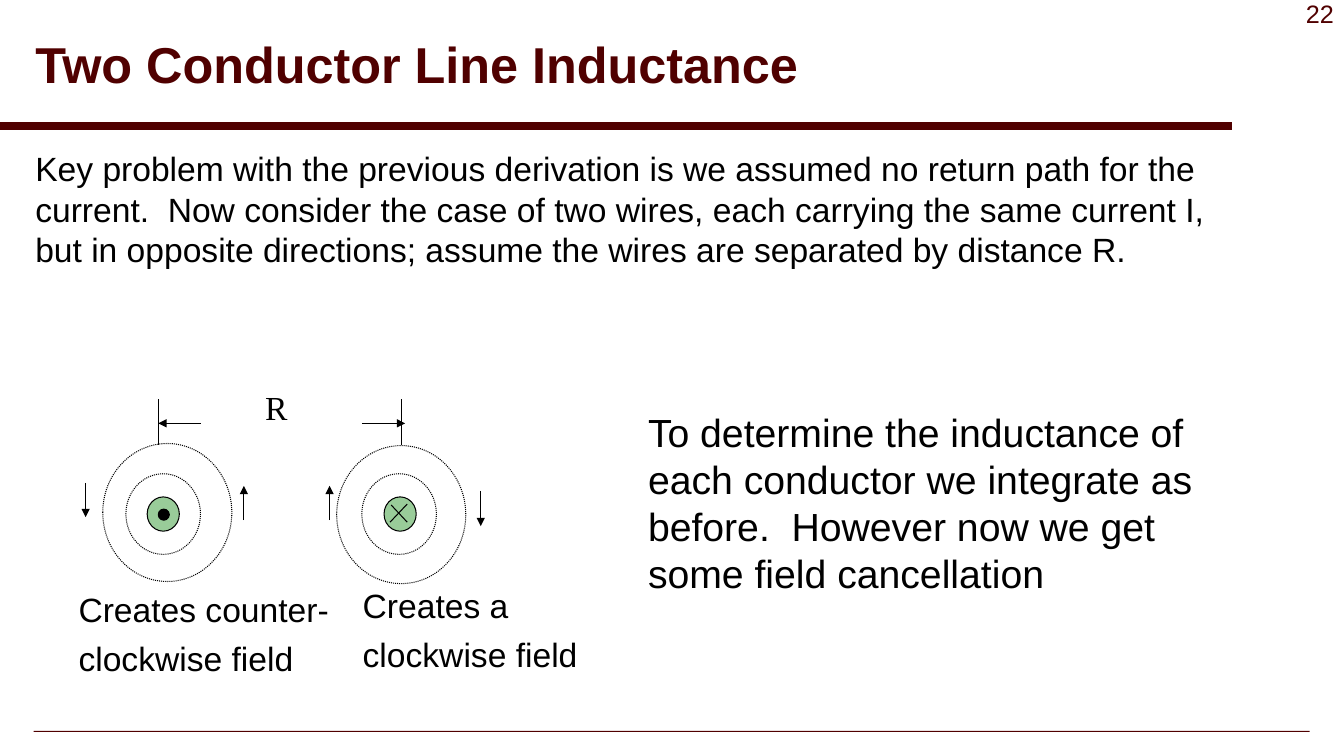
"""Build the slide on the inductance of a two conductor line."""
from pptx import Presentation
from pptx.dml.color import RGBColor
from pptx.enum.dml import MSO_LINE
from pptx.enum.shapes import MSO_CONNECTOR, MSO_SHAPE
from pptx.enum.text import MSO_ANCHOR, MSO_AUTO_SIZE, PP_ALIGN
from pptx.oxml.ns import qn
from pptx.util import Pt
from lxml.etree import SubElement

COLORS = {"maroon": "500000", "black": "000000", "green": "99CC99"}

TITLE = "Two Conductor Line Inductance"
BODY = (
    "Key problem with the previous derivation is we assumed no return path for the current.  "
    "Now consider the case of two wires, each carrying the same current I, but in opposite "
    "directions; assume the wires are separated by distance R."
)
TITLE_BOX = (18, 5.8, 858.2, 84.2)
BODY_BOX = (18, 102.2, 858.2, 408.2)

# lines, box, size, font, color, wrap, alignment
LABELS = [
    (["22"], (873.4, -5, 86.4, 28.8), 18, "Arial", "maroon", True, PP_ALIGN.RIGHT),
    (["R"], (182.2, 272.9, 30.2, 36), 24, "Times New Roman", "black", False, PP_ALIGN.LEFT),
    (["Creates counter-", "clockwise field"], (49, 416.9, 195.1, 71.3),
     24, "Arial", "black", False, PP_ALIGN.LEFT),
    (["Creates a", "clockwise field"], (252, 414, 169.9, 71.3),
     24, "Arial", "black", False, PP_ALIGN.LEFT),
    (["To determine the inductance of each conductor we integrate as before.  "
      "However now we get some field cancellation"], (455.8, 288, 444.2, 143.3),
     28, "Arial", "black", True, PP_ALIGN.LEFT),
]

# width, height, fill, centers
ELLIPSES = [
    (23, 24.5, "green", [(116.6, 367.2), (285.8, 367.2)]),
    (53.3, 57.6, None, [(116.6, 367.2), (285.1, 367.2)]),
    (92.2, 98.6, None, [(119.5, 366.1), (286.6, 367.6)]),
    (7.9, 7.9, "black", [(117, 367.6)]),
]

PLAIN_LINES = [
    (113, 285.1, 113, 318.2),
    (286.6, 285.1, 286.6, 318.2),
    (279.4, 360.7, 290.9, 373),
    (278.6, 373, 290.9, 360),
]
ARROWS = [
    (143.3, 302.4, 113, 302.4),
    (258.5, 302.4, 289.4, 302.4),
    (174.2, 371.5, 174.2, 347),
    (235.4, 371.5, 235.4, 347),
    (61.2, 344.9, 61.2, 369.4),
    (343.4, 350.6, 343.4, 375.8),
]


def color(name):
    return RGBColor.from_string(COLORS[name])


def style_font(font, size, name, color_name, bold=False):
    font.size, font.name, font.bold = Pt(size), name, bold
    font.color.rgb = color(color_name)


def place(shape, box):
    shape.left, shape.top, shape.width, shape.height = map(Pt, box)


def add_line(slide, ends, color_name="black", width=0.75, arrow=False):
    line = slide.shapes.add_connector(MSO_CONNECTOR.STRAIGHT, *map(Pt, ends))
    line.line.color.rgb = color(color_name)
    line.line.width = Pt(width)
    properties = line._element.spPr
    if arrow:
        SubElement(line.line._get_or_add_ln(), qn("a:tailEnd"), type="triangle")
    SubElement(properties, qn("a:effectLst"))


def add_shape(slide, kind, box, fill):
    shape = slide.shapes.add_shape(kind, *map(Pt, box))
    shape.shadow.inherit = False
    if fill:
        shape.fill.solid()
        shape.fill.fore_color.rgb = color(fill)
    else:
        shape.fill.background()
    return shape


def add_ellipse(slide, center, width, height, fill):
    left, top = center[0] - width / 2, center[1] - height / 2
    ellipse = add_shape(slide, MSO_SHAPE.OVAL, (left, top, width, height), fill)
    ellipse.line.color.rgb = color("black")
    ellipse.line.width = Pt(0.75)
    if not fill:
        ellipse.line.dash_style = MSO_LINE.ROUND_DOT


def add_label(slide, lines, box, size, font_name, color_name, wrap, alignment):
    frame = slide.shapes.add_textbox(*map(Pt, box)).text_frame
    frame.word_wrap = wrap
    frame.text = "\n".join(lines)
    for index, paragraph in enumerate(frame.paragraphs):
        paragraph.alignment = alignment
        paragraph.space_before = Pt(6.5 if index else 0)
        style_font(paragraph.font, size, font_name, color_name)


def fill_placeholder(shape, box, text, anchor):
    place(shape, box)
    frame = shape.text_frame
    frame.text = text
    frame.word_wrap = True
    frame.auto_size = MSO_AUTO_SIZE.NONE
    frame.vertical_anchor = anchor
    paragraph = frame.paragraphs[0]
    paragraph.alignment = PP_ALIGN.LEFT
    paragraph.space_before = Pt(0)
    return paragraph


def main():
    presentation = Presentation()
    presentation.slide_width, presentation.slide_height = Pt(960), Pt(540)
    slide = presentation.slides.add_slide(presentation.slide_layouts[1])

    title = fill_placeholder(slide.shapes.title, TITLE_BOX, TITLE, MSO_ANCHOR.MIDDLE)
    title.line_spacing = 0.9
    style_font(title.font, 36, "Arial", "maroon", bold=True)

    body = fill_placeholder(slide.placeholders[1], BODY_BOX, BODY, MSO_ANCHOR.TOP)
    properties = body._p.get_or_add_pPr()
    properties.set("marL", "0")
    properties.set("indent", "0")
    SubElement(properties, qn("a:buNone"))
    style_font(body.font, 24, "Arial", "black")

    footer_rule = add_shape(slide, MSO_SHAPE.RECTANGLE, (24, 522, 911.5, 0.72), "maroon")
    footer_rule.line.fill.background()
    add_line(slide, (0, 90, 880, 90), "maroon", 6)

    for width, height, fill, centers in ELLIPSES:
        for center in centers:
            add_ellipse(slide, center, width, height, fill)
    for ends in PLAIN_LINES:
        add_line(slide, ends)
    for ends in ARROWS:
        add_line(slide, ends, arrow=True)
    for label in LABELS:
        add_label(slide, *label)

    presentation.save("out.pptx")


if __name__ == "__main__":
    main()
